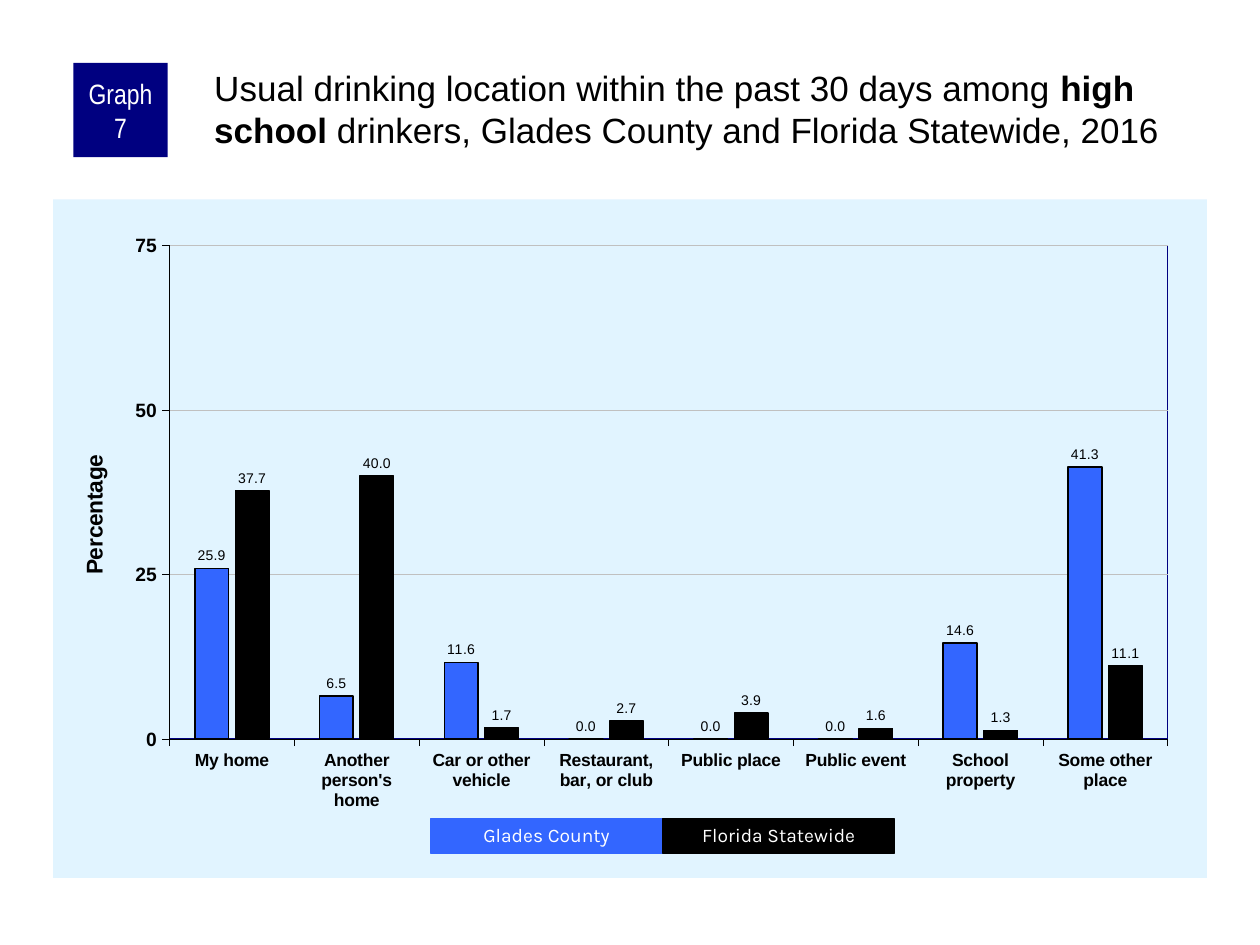
from dataclasses import dataclass

from lxml.etree import Element
from pptx import Presentation
from pptx.chart.chart import Chart
from pptx.chart.data import CategoryChartData
from pptx.dml.color import RGBColor
from pptx.dml.fill import FillFormat
from pptx.dml.line import LineFormat
from pptx.enum.chart import XL_CHART_TYPE, XL_LABEL_POSITION, XL_TICK_MARK
from pptx.enum.shapes import MSO_SHAPE
from pptx.enum.text import MSO_ANCHOR, PP_ALIGN
from pptx.oxml import parse_xml
from pptx.oxml.ns import nsdecls, qn
from pptx.shapes.autoshape import Shape
from pptx.slide import Slide
from pptx.text.text import Font
from pptx.util import Cm, Pt

BLACK, WHITE, NAVY = "000000", "FFFFFF", "000080"
BLUE, PALE_BLUE, GREY = "3366FF", "E1F4FF", "C0C0C0"


@dataclass
class Series:
    name: str
    color: str
    line_width: float
    number_format: str
    values: tuple[float, ...]


@dataclass
class Block:
    text: str
    left: float
    top: float
    width: float
    height: float
    fill: str
    size: float
    font: str


CATEGORIES = ("My home", "Another person's home", "Car or other vehicle",
              "Restaurant, bar, or club", "Public place", "Public event",
              "School property", "Some other place")
SERIES = (
    Series("Glades County", BLUE, 1, "0.0",
           (25.9, 6.5, 11.6, 0, 0, 0, 14.6, 41.3)),
    Series("Florida Statewide", BLACK, 0.75, "#,##0.0",
           (37.7, 40, 1.7, 2.7, 3.9, 1.6, 1.3, 11.1)),
)
TITLE = (("Usual drinking location within the past 30 days among ", False),
         ("high school", True),
         (" drinkers, Glades County and Florida Statewide, 2016", False))
LEGEND_LEFT, LEGEND_WIDTH = 8.68, 4.68


def rgb(color: str) -> RGBColor:
    return RGBColor.from_string(color)


def set_fill(fill: FillFormat, color: str) -> None:
    fill.solid()
    fill.fore_color.rgb = rgb(color)


def set_line(line: LineFormat, color: str, width: float) -> None:
    set_fill(line.fill, color)
    line.width = Pt(width)


def set_font(font: Font, size: float, color: str = BLACK,
             bold: bool = False, name: str = "Arial") -> None:
    font.name, font.size, font.bold = name, Pt(size), bold
    font.color.rgb = rgb(color)


def manual_layout(target: str, **fractions: float) -> Element:
    """Return a chart layout given in fractions of the chart's size."""
    inner = f'<c:layoutTarget val="{target}"/>' if target else ""
    modes = "".join(f'<c:{key}Mode val="edge"/>' for key in "xy")
    sizes = "".join(f'<c:{key} val="{value}"/>' for key, value in fractions.items())
    return parse_xml(f'<c:layout {nsdecls("c")}><c:manualLayout>{inner}{modes}'
                     f'{sizes}</c:manualLayout></c:layout>')


def shape_properties(content: str) -> Element:
    return parse_xml(f'<c:spPr {nsdecls("c", "a")}>{content}</c:spPr>')


def solid(color: str) -> str:
    return f'<a:solidFill><a:srgbClr val="{color}"/></a:solidFill>'


def place_layout(parent: Element, layout: Element, index: int) -> None:
    for old in parent.findall(qn("c:layout")):
        parent.remove(old)
    parent.insert(index, layout)


def format_axes(chart: Chart) -> None:
    for axis, size in ((chart.category_axis, 10), (chart.value_axis, 11)):
        axis.major_tick_mark = XL_TICK_MARK.OUTSIDE
        axis.minor_tick_mark = XL_TICK_MARK.NONE
        set_font(axis.tick_labels.font, size, bold=True)
        set_line(axis.format.line, BLACK, 0.25)

    value_axis = chart.value_axis
    value_axis.minimum_scale, value_axis.maximum_scale = 0, 75
    value_axis.major_unit = 25
    set_line(value_axis.major_gridlines.format.line, GREY, 0.25)
    value_axis.tick_labels.number_format = "0"
    value_axis.tick_labels.number_format_is_linked = False

    axis_title = value_axis.axis_title
    axis_title.text_frame.text = "Percentage"
    set_font(axis_title.text_frame.paragraphs[0].runs[0].font, 13, bold=True)
    body = axis_title.element.find(".//" + qn("a:bodyPr"))
    body.set("rot", "-5400000")
    body.set("vert", "horz")
    place_layout(axis_title.element, manual_layout("", x=0.02, y=0.37), 1)


def add_column_chart(page: Slide) -> None:
    data = CategoryChartData()
    data.categories = CATEGORIES
    for series in SERIES:
        data.add_series(series.name, series.values)
    chart = page.shapes.add_chart(XL_CHART_TYPE.COLUMN_CLUSTERED, Cm(1.07), Cm(4.02),
                                  Cm(23.26), Cm(13.68), data).chart
    chart.has_legend = chart.has_title = False
    set_font(chart.font, 11.5)
    format_axes(chart)

    # Columns and their labels
    plot = chart.plots[0]
    plot.gap_width, plot.overlap, plot.vary_by_categories = 150, -20, False
    for series, columns in zip(SERIES, plot.series):
        set_fill(columns.format.fill, series.color)
        set_line(columns.format.line, BLACK, series.line_width)
        columns.invert_if_negative = False
        labels = columns.data_labels
        labels.show_value = True
        labels.position = XL_LABEL_POSITION.OUTSIDE_END
        labels.number_format = series.number_format
        labels.number_format_is_linked = False
        set_font(labels.font, 8)

    # Chart background, plot position and plot border
    chart_part = chart.element.find(qn("c:chart"))
    chart_part.addnext(shape_properties(solid(PALE_BLUE) + "<a:ln><a:noFill/></a:ln>"))
    plot_area = chart_part.find(qn("c:plotArea"))
    place_layout(plot_area, manual_layout("inner", x=0.101, y=0.068, w=0.865, h=0.727), 0)
    plot_area.append(shape_properties(
        f'<a:noFill/><a:ln w="{Pt(1)}">{solid(NAVY)}</a:ln>'))


def add_block(page: Slide, block: Block) -> Shape:
    box = page.shapes.add_shape(MSO_SHAPE.RECTANGLE, Cm(block.left), Cm(block.top),
                                Cm(block.width), Cm(block.height))
    box.shadow.inherit = False
    set_fill(box.fill, block.fill)
    set_line(box.line, block.fill, 0.75)
    box.text_frame.text = block.text
    box.text_frame.word_wrap = True
    para = box.text_frame.paragraphs[0]
    para.alignment = PP_ALIGN.CENTER
    set_font(para.runs[0].font, block.size, WHITE, name=block.font)
    return box


def add_title(page: Slide) -> None:
    frame = page.shapes.add_textbox(Cm(4.24), Cm(1.27), Cm(20.12), Cm(2.11)).text_frame
    frame.word_wrap = True
    frame.margin_left = frame.margin_top = Cm(0.08)
    frame.margin_right = frame.margin_bottom = 0
    for text, bold in TITLE:
        span = frame.paragraphs[0].add_run()
        span.text = text
        set_font(span.font, 20, bold=bold)


def main() -> None:
    deck = Presentation()
    deck.slide_width, deck.slide_height = Cm(25.4), Cm(19.05)
    page = deck.slides.add_slide(deck.slide_layouts[6])

    add_column_chart(page)

    # Heading
    badge = add_block(page, Block("Graph 7", 1.48, 1.27, 1.9, 1.9, NAVY, 16, "Arial Narrow"))
    badge.line.fill.background()
    frame = badge.text_frame
    frame.vertical_anchor = MSO_ANCHOR.MIDDLE
    frame.margin_left = frame.margin_right = Cm(0.13)
    frame.margin_top = frame.margin_bottom = 0
    add_title(page)

    # Legend, one block per series
    for index, series in enumerate(SERIES):
        left = LEGEND_LEFT + index * LEGEND_WIDTH
        key = add_block(page, Block(series.name, left, 16.51, LEGEND_WIDTH, 0.69,
                                    series.color, 11, "Karla"))
        key.text_frame.paragraphs[0].line_spacing = 0.9

    deck.save("out.pptx")


if __name__ == "__main__":
    main()
